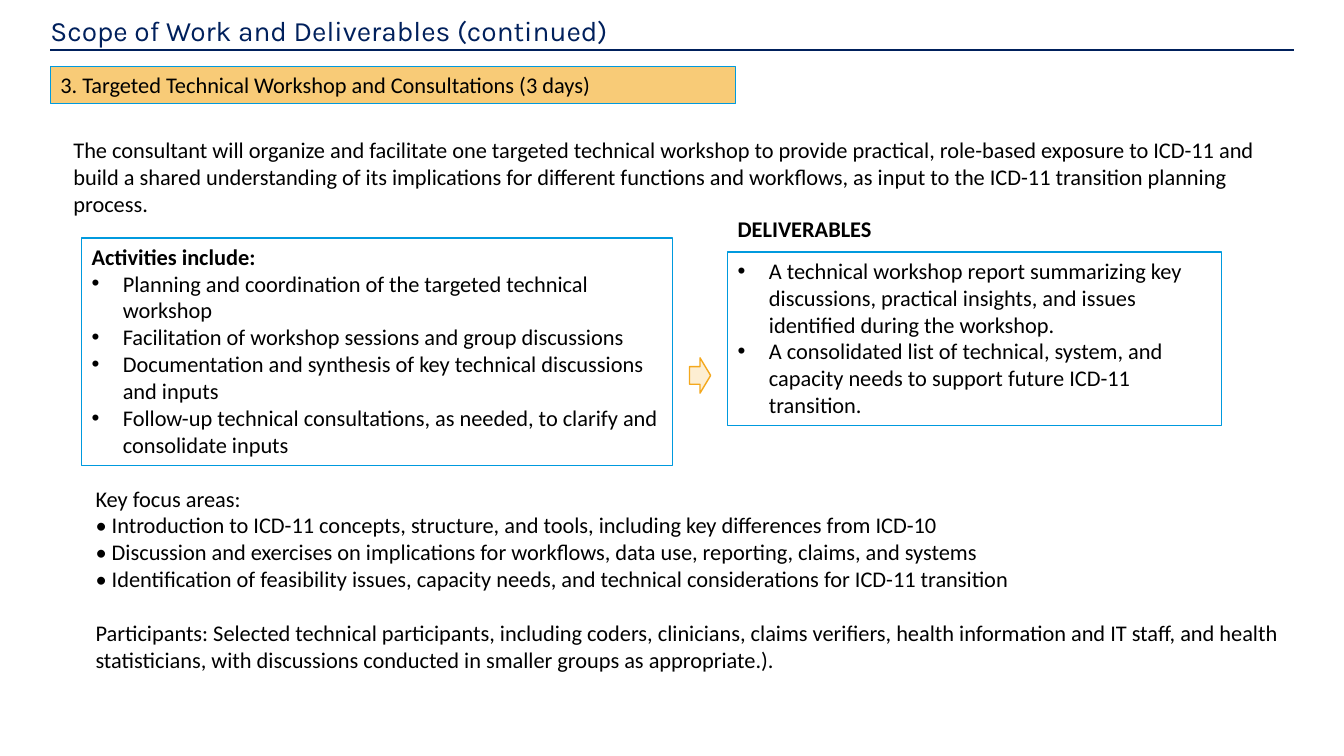
from lxml import etree
from pptx import Presentation
from pptx.dml.color import RGBColor
from pptx.enum.shapes import MSO_CONNECTOR, MSO_SHAPE
from pptx.enum.text import MSO_ANCHOR, PP_ALIGN
from pptx.oxml.ns import qn
from pptx.util import Inches, Pt

RECTANGLE = MSO_SHAPE.RECTANGLE
RIGHT_ARROW = MSO_SHAPE.RIGHT_ARROW
STRAIGHT = MSO_CONNECTOR.STRAIGHT
TOP = MSO_ANCHOR.TOP
LEFT = PP_ALIGN.LEFT

COLORS = {
    "navy": "00205C",
    "blue": "009ADE",
    "amber": "F8CB77",
    "cream": "FDEED2",
    "orange": "F4A81D",
    "white": "FFFFFF",
    "black": "000000",
}


class ScopeSlide:
    columns, rows = 40, 30
    body_font, title_font = "Calibri", "Karla"
    body_size, title_size = 16, 20
    bullet_indent = Inches(0.31)

    def __init__(self, deck):
        self.column = deck.slide_width / self.columns
        self.row = deck.slide_height / self.rows
        self.page = deck.slides.add_slide(deck.slide_layouts[6])

    def place(self, left, top, width, height):
        return (round(left * self.column), round(top * self.row),
                round(width * self.column), round(height * self.row))

    def color(self, name):
        return RGBColor.from_string(COLORS[name])

    def bullet(self, para):
        properties = para._p.get_or_add_pPr()
        properties.set("marL", str(self.bullet_indent))
        properties.set("indent", str(-self.bullet_indent))
        etree.SubElement(properties, qn("a:buFont")).set("typeface", "Arial")
        etree.SubElement(properties, qn("a:buChar")).set("char", "•")

    def add_lines(self, box, lines, bold_first=False, bullets_from=None, gap_before=None):
        frame = box.text_frame
        frame.word_wrap = True
        frame.vertical_anchor = TOP
        for index, line in enumerate(lines):
            para = frame.paragraphs[0] if index == 0 else frame.add_paragraph()
            para.alignment = LEFT
            if index == gap_before:
                para.space_before = Pt(19.5)
            if bullets_from is not None and index >= bullets_from:
                self.bullet(para)
            span = para.add_run()
            span.text = line
            span.font.name = self.body_font
            span.font.size = Pt(self.body_size)
            span.font.bold = bold_first and index == 0
            span.font.color.rgb = self.color("black")

    def title(self, text, *area):
        box = self.page.shapes.add_textbox(*self.place(*area))
        frame = box.text_frame
        frame.word_wrap = True
        frame.margin_left = frame.margin_right = 0
        frame.margin_top = frame.margin_bottom = 0
        para = frame.paragraphs[0]
        para.line_spacing = 0.9
        span = para.add_run()
        span.text = text
        span.font.name = self.title_font
        span.font.size = Pt(self.title_size)
        span.font.color.rgb = self.color("navy")

    def rule(self, left, top, width):
        x, y, length, _ = self.place(left, top, width, 0)
        rule = self.page.shapes.add_connector(STRAIGHT, x, y, x + length, y)
        rule.line.color.rgb = self.color("navy")
        rule.line.width = Pt(1.5)
        etree.SubElement(rule._element.spPr, qn("a:effectLst"))

    def text(self, lines, *area, **style):
        self.add_lines(self.page.shapes.add_textbox(*self.place(*area)), lines, **style)

    def shape(self, kind, fill, line, weight, *area):
        shape = self.page.shapes.add_shape(kind, *self.place(*area))
        shape.shadow.inherit = False
        shape.fill.solid()
        shape.fill.fore_color.rgb = self.color(fill)
        shape.line.color.rgb = self.color(line)
        shape.line.width = Pt(weight)
        return shape

    def panel(self, lines, fill, weight, *area, **style):
        self.add_lines(self.shape(RECTANGLE, fill, "blue", weight, *area), lines, **style)


def main():
    deck = Presentation()
    deck.slide_width, deck.slide_height = Inches(13.33), Inches(7.5)
    scope = ScopeSlide(deck)

    scope.rule(1.5, 2, 37)
    scope.title("Scope of Work and Deliverables (continued)", 1.5, 0.68, 37, 1.88)
    scope.panel(["3. Targeted Technical Workshop and Consultations (3 days)"],
                "amber", 0.75, 1.5, 2.64, 20.4, 1.48)
    scope.text([
        "Key focus areas:",
        "• Introduction to ICD-11 concepts, structure, and tools, including key differences from ICD-10",
        "• Discussion and exercises on implications for workflows, data use, reporting, claims, and systems",
        "• Identification of feasibility issues, capacity needs, and technical considerations for ICD-11 transition",
        "Participants: Selected technical participants, including coders, clinicians, claims verifiers, "
        "health information and IT staff, and health statisticians, with discussions conducted in "
        "smaller groups as appropriate.).",
    ], 2.55, 19.04, 36.6, 9.04, gap_before=4)
    scope.text([
        "The consultant will organize and facilitate one targeted technical workshop to provide practical, "
        "role-based exposure to ICD-11 and build a shared understanding of its implications for different "
        "functions and workflows, as input to the ICD-11 transition planning process.",
    ], 1.89, 5.2, 35.82, 3.64)
    scope.panel([
        "A technical workshop report summarizing key discussions, practical insights, and issues "
        "identified during the workshop.",
        "A consolidated list of technical, system, and capacity needs to support future ICD-11 transition.",
    ], "white", 1, 21.66, 10, 14.7, 6.88, bullets_from=0)
    scope.text(["DELIVERABLES"], 21.66, 8.36, 9.75, 1.48, bold_first=True)
    scope.shape(RIGHT_ARROW, "cream", "orange", 1, 20.52, 14.2, 0.63, 1.4)
    scope.panel([
        "Activities include:",
        "Planning and coordination of the targeted technical workshop",
        "Facilitation of workshop sessions and group discussions",
        "Documentation and synthesis of key technical discussions and inputs",
        "Follow-up technical consultations, as needed, to clarify and consolidate inputs",
    ], "white", 1, 2.43, 9.44, 17.58, 9.04, bold_first=True, bullets_from=1)

    deck.save("out.pptx")


if __name__ == "__main__":
    main()
